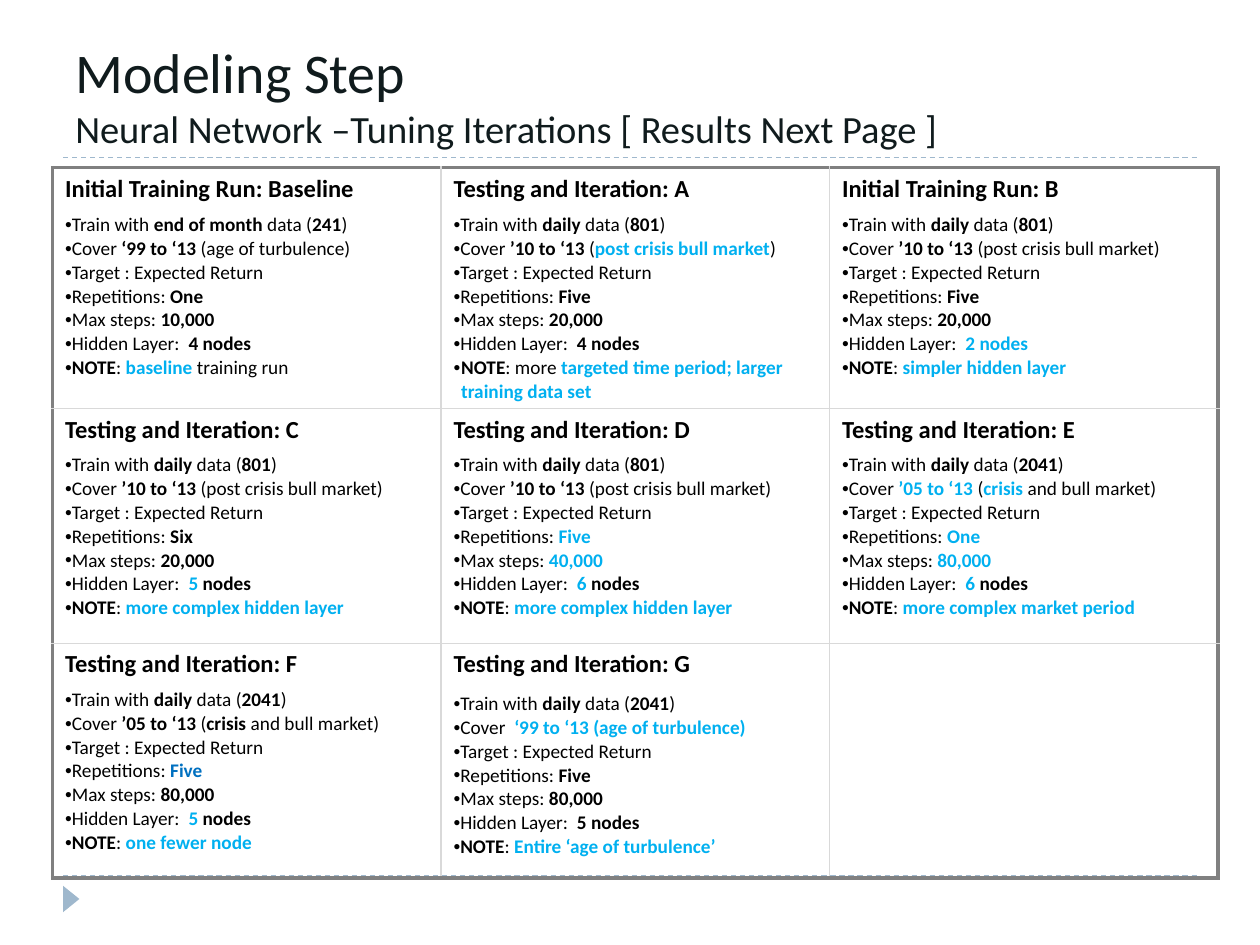
from lxml import etree
from pptx import Presentation
from pptx.dml.color import RGBColor
from pptx.enum.dml import MSO_LINE
from pptx.enum.shapes import MSO_CONNECTOR, MSO_SHAPE
from pptx.enum.text import MSO_ANCHOR
from pptx.oxml.ns import qn
from pptx.util import Inches, Pt

STRAIGHT = MSO_CONNECTOR.STRAIGHT
TRIANGLE = MSO_SHAPE.ISOSCELES_TRIANGLE
DASH = MSO_LINE.DASH
BOTTOM = MSO_ANCHOR.BOTTOM

WIDTH, HEIGHT = Inches(10), Inches(7.5)
UNIT = WIDTH / 100
FONT = "Calibri"
INK, BLACK, STEEL = "101B1D", "000000", "9FB8CD"
GREY, PALE = "808080", "D9D9D9"
MARKS = {"*": BLACK, "^": "00B0F0", "~": "0070C0"}
LONG = 50

LABELS = ["Train with ", "Cover ", "Target : ", "Repetitions: ",
          "Max steps: ", "Hidden Layer:  ", "*NOTE|: "]
RUNS = [
    ("Initial Training Run: Baseline", 5.5, "end of month", "241",
     "*‘99 to ‘13 |(age of turbulence)", "*One", "*10,000", "*4 nodes",
     "^baseline| training run"),
    ("Testing and Iteration: A", 5.5, "daily", "801",
     "*’10 to ‘13 |(|^post crisis bull market|)", "*Five", "*20,000", "*4 nodes",
     "more |^targeted time period; larger training data set"),
    ("Initial Training Run: B", 5.5, "daily", "801",
     "*’10 to ‘13 |(post crisis bull market)", "*Five", "*20,000", "^2 nodes",
     "^simpler hidden layer"),
    ("Testing and Iteration: C", 5, "daily", "801",
     "*’10 to ‘13 |(post crisis bull market)", "*Six", "*20,000", "^5|* nodes",
     "^more complex hidden layer"),
    ("Testing and Iteration: D", 5, "daily", "801",
     "*’10 to ‘13 |(post crisis bull market)", "^Five", "^40,000", "^6|* nodes",
     "^more complex hidden layer"),
    ("Testing and Iteration: E", 5, "daily", "2041",
     "^’05 to ‘13 |(|^crisis| and bull market)", "^One", "^80,000", "^6|* nodes",
     "^more complex market period"),
    ("Testing and Iteration: F", 5, "daily", "2041",
     "*’05 to ‘13 |(|*crisis| and bull market)", "~Five", "*80,000", "^5|* nodes",
     "^one fewer node"),
    ("Testing and Iteration: G", 7.3, "daily", "2041",
     "^ ‘99 to ‘13 (age of turbulence)", "*Five", "*80,000", "*5 nodes",
     "^Entire ‘age of turbulence’"),
]


def grid(*cells):
    return [round(cell * UNIT) for cell in cells]


def color(code):
    return RGBColor.from_string(code)


def style(run, size, code, bold=False):
    font = run.font
    font.name, font.size, font.bold = FONT, Pt(size), bold
    font.color.rgb = color(code)


def add_rule(slide, box):
    left, top, width, _ = box
    rule = slide.shapes.add_connector(STRAIGHT, left, top, left + width, top)
    rule.line.color.rgb = color(STEEL)
    rule.line.width = Pt(0.75)
    rule.line.dash_style = DASH
    etree.SubElement(rule._element.spPr, qn("a:effectLst"))


def add_mark(slide, box):
    mark = slide.shapes.add_shape(TRIANGLE, *box)
    mark.rotation = 90
    mark.shadow.inherit = False
    mark.fill.solid()
    mark.fill.fore_color.rgb = color(STEEL)
    mark.line.fill.background()


def add_title(slide, box):
    frame = slide.shapes.add_textbox(*box).text_frame
    frame.word_wrap = True
    frame.vertical_anchor = BOTTOM
    frame.text = "Modeling Step\vNeural Network –Tuning Iterations [ Results Next Page ]"
    for run, size in zip(frame.paragraphs[0].runs, (32, 22)):
        style(run, size, INK)


def add_edge(cell, side, outer):
    edge = etree.SubElement(cell._tc.get_or_add_tcPr(), qn(f"a:ln{side}"),
                            w=str(Pt(2.25 if outer else 1)))
    fill = etree.SubElement(edge, qn("a:solidFill"))
    etree.SubElement(fill, qn("a:srgbClr"), val=GREY if outer else PALE)


def add_point(frame, text):
    para = frame.add_paragraph()
    props = para._p.get_or_add_pPr()
    hang = Inches(0.06) if len(text) > LONG else 0
    props.set("marL", str(hang))
    props.set("indent", str(-hang))
    etree.SubElement(props, qn("a:buFont"), typeface="Arial")
    etree.SubElement(props, qn("a:buChar"), char="•")
    for part in text.split("|"):
        bold = part[0] in MARKS
        run = para.add_run()
        run.text = part[1:] if bold else part
        style(run, 11, MARKS.get(part[0], BLACK), bold)


def fill_cell(cell, head, gap, span, count, cover, *rest):
    frame = cell.text_frame
    frame.text = head
    first = frame.paragraphs[0]
    first.space_after = Pt(gap)
    style(first.runs[0], 14, BLACK, True)
    train = f"*{span} |data (|*{count}|)"
    values = [train, cover, "Expected Return", *rest]
    for label, value in zip(LABELS, values):
        join = "|" if value[0] in MARKS else ""
        add_point(frame, label + join + value)


def add_runs(slide, box, rows=3, cols=3):
    table = slide.shapes.add_table(rows, cols, *box).table
    table.first_row = table.horz_banding = False
    table.rows[0].height = grid(19.13)[0]
    for index, cell in enumerate(table.iter_cells()):
        row, col = divmod(index, cols)
        sides = {"L": col == 0, "R": col == cols - 1,
                 "T": row == 0, "B": row == rows - 1}
        for side, outer in sides.items():
            add_edge(cell, side, outer)
        cell.fill.background()
        if index < len(RUNS):
            fill_cell(cell, *RUNS[index])


def main():
    deck = Presentation()
    deck.slide_width, deck.slide_height = WIDTH, HEIGHT
    slide = deck.slides.add_slide(deck.slide_layouts[6])
    for top in (69.5, 12.5):
        add_rule(slide, grid(5, top, 90, 0))
    add_mark(slide, grid(4.6, 70.7, 2.1, 1.3))
    add_title(slide, grid(5, 1.7, 90, 10.8))
    add_runs(slide, grid(4.17, 13.3, 92.5, 55.9))
    deck.save("out.pptx")


if __name__ == "__main__":
    main()
